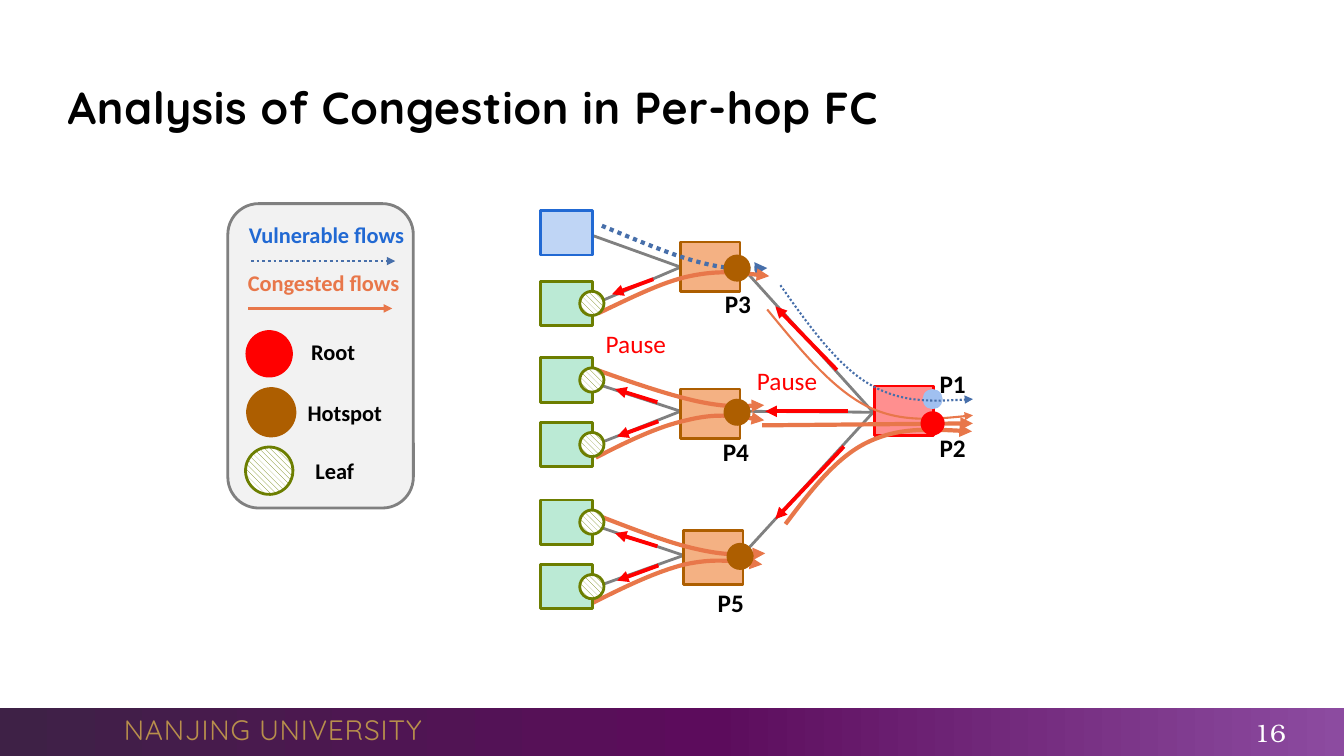
from copy import deepcopy
from dataclasses import dataclass

from lxml import etree
from pptx import Presentation
from pptx.dml.color import RGBColor
from pptx.enum.dml import MSO_LINE, MSO_PATTERN
from pptx.enum.shapes import MSO_CONNECTOR, MSO_SHAPE
from pptx.enum.text import MSO_ANCHOR, MSO_AUTO_SIZE, PP_ALIGN
from pptx.oxml.ns import qn
from pptx.util import Inches, Pt

RECT, ROUND, OVAL = MSO_SHAPE.RECTANGLE, MSO_SHAPE.ROUNDED_RECTANGLE, MSO_SHAPE.OVAL
LEFT, CENTER, RIGHT = PP_ALIGN.LEFT, PP_ALIGN.CENTER, PP_ALIGN.RIGHT
STRAIGHT, DOTS, MIDDLE = MSO_CONNECTOR.STRAIGHT, MSO_LINE.ROUND_DOT, MSO_ANCHOR.MIDDLE
STRIPES, HATCH = MSO_PATTERN.DARK_VERTICAL, MSO_PATTERN.WIDE_DOWNWARD_DIAGONAL


@dataclass(frozen=True)
class Theme:
    black: str = "000000"
    white: str = "FFFFFF"
    gray: str = "808080"
    panel: str = "F2F2F2"
    red: str = "FF0000"
    pink: str = "FF8F8F"
    sky: str = "A0C0F0"
    blue: str = "2169D3"
    pale_blue: str = "BFD5F5"
    flow_blue: str = "476FAA"
    orange: str = "E8774A"
    pale_orange: str = "F4B183"
    brown: str = "AD5E00"
    olive: str = "6C7E00"
    mint: str = "BBEAD5"
    gold: str = "B88F4C"
    footer: tuple = ((0, "3E2146"), (0.53, "5C0C5C"), (1, "8C4BA0"))
    body: str = "Calibri"
    heading: str = "Quicksand"
    number: str = "TeX Gyre Bonum"
    title_size: int = 32
    footer_size: int = 20
    label_size: int = 18
    legend_size: int = 16
    outline: float = 2
    pause_line: float = 2.75
    thick: float = 3
    thin: float = 1.5


T = Theme()
WIDTH, HEIGHT = 13.33, 7.5
TITLE = "Analysis of Congestion in Per-hop FC"
HOST_LEFT, HOST_WIDTH, HOST_HEIGHT = 5.36, 0.52, 0.44
HOST_TOPS = (2.09, 2.79, 3.55, 4.19, 4.96, 5.6)
SWITCH_WIDTH, PORT_SIZE, LEGEND_SIZE = 0.59, 0.24, 0.47
SWITCHES = [(6.75, 2.4, 0.49, 2.65), (6.75, 3.86, 0.49, 4.08), (6.78, 5.26, 0.54, 5.51)]
ROOT_LEFT, ROOT_TOP, ROOT_PORT = 8.67, 3.83, 4.09

FLOWS = [
    (T.flow_blue, T.thin, DOTS, [(7.74, 2.83), (8.02, 3.23), (8.31, 3.63), (8.62, 3.81),
                                 (8.94, 4), (9.29, 3.98), (9.65, 3.96)]),
    (T.orange, T.thin, None, [(7.61, 3.07), (7.93, 3.46), (8.24, 3.84), (8.58, 4.02),
                              (8.91, 4.19), (9.28, 4.16), (9.65, 4.12)]),
    (T.orange, T.thick, None, [(7.79, 5.2), (8.04, 4.87), (8.29, 4.54), (8.6, 4.39),
                               (8.91, 4.24), (9.27, 4.26), (9.64, 4.28)]),
    (T.flow_blue, T.thick, DOTS, [(5.97, 2.24), (6.31, 2.38), (6.66, 2.53), (6.93, 2.6),
                                  (7.2, 2.67), (7.4, 2.67), (7.61, 2.66)]),
    (T.orange, T.thick, None, [(5.93, 3.11), (6.25, 2.96), (6.56, 2.8), (6.84, 2.74),
                               (7.13, 2.68), (7.38, 2.71), (7.63, 2.74)]),
    (T.orange, T.thick, None, [(5.92, 3.67), (6.28, 3.8), (6.64, 3.92), (6.91, 3.98),
                               (7.19, 4.04), (7.39, 4.03), (7.58, 4.02)]),
    (T.orange, T.thick, None, [(5.91, 4.54), (6.22, 4.38), (6.53, 4.23), (6.81, 4.17),
                               (7.09, 4.1), (7.34, 4.13), (7.58, 4.17)]),
    (T.orange, T.thick, None, [(5.92, 5.11), (6.28, 5.25), (6.64, 5.39), (6.92, 5.45),
                               (7.19, 5.51), (7.39, 5.5), (7.59, 5.49)]),
    (T.orange, T.thick, None, [(5.88, 5.98), (6.2, 5.82), (6.51, 5.67), (6.79, 5.6),
                               (7.07, 5.54), (7.31, 5.57), (7.56, 5.6)]),
]
PAUSES = [((8.3, 3.67), (7.69, 3.04)), ((8.41, 4.08), (7.59, 4.08)), ((8.37, 4.43), (7.69, 5.15)),
          ((6.48, 2.77), (6.07, 2.92)),
          ((6.52, 3.99), (6.1, 3.86)), ((6.53, 4.18), (6.12, 4.33)),
          ((6.52, 5.42), (6.1, 5.29)), ((6.53, 5.61), (6.12, 5.76))]
PORT_LABELS = [("P3", 7.09, 2.81), ("P4", 7.07, 4.28), ("P1", 9.22, 3.61),
               ("P2", 9.22, 4.24), ("P5", 7.02, 5.78)]
PAUSE_LABELS = [(7.41, 3.58), (5.91, 3.21)]
LEGEND_MARKS = [("Root", 2.59, 3.31, 1.43, (2.67, 3.51), T.red, None),
                ("Hotspot", 2.59, 3.91, 1.66, (2.69, 4.09), T.brown, STRIPES),
                ("Leaf", 2.49, 4.49, 1.66, (2.67, 4.67), T.olive, HATCH)]
LEGEND_FLOWS = [("Vulnerable flows", 2.37, 2.14, T.blue, (2.49, 2.59), T.flow_blue, DOTS),
                ("Congested flows", 2.36, 2.62, T.orange, (2.46, 3.06), T.orange, None)]


def rgb(code):
    return RGBColor.from_string(code)


def add_block(page, kind, area, fill, edge=None):
    block = page.shapes.add_shape(kind, *map(Inches, area))
    block.shadow.inherit = False
    block.fill.solid()
    block.fill.fore_color.rgb = rgb(fill)
    if edge:
        block.line.color.rgb = rgb(edge)
        block.line.width = Pt(T.outline)
    else:
        block.line.fill.background()
    return block


def add_dot(page, center, size, color, pattern=None):
    area = (center[0] - size / 2, center[1] - size / 2, size, size)
    dot = add_block(page, OVAL, area, color, color if pattern else None)
    if pattern:
        dot.fill.patterned()
        dot.fill.pattern = pattern
        dot.fill.fore_color.rgb = rgb(color)
        dot.fill.back_color.rgb = rgb(T.white)
        dot.rotation = 87.2


def style_line(line, color, width, dash=None, arrow=True):
    line.color.rgb = rgb(color)
    line.width = Pt(width)
    if dash:
        line.dash_style = dash
    if arrow:
        etree.SubElement(line._get_or_add_ln(), qn("a:tailEnd"), type="triangle")


def add_line(page, start, end, color, width, dash=None, arrow=True):
    link = page.shapes.add_connector(STRAIGHT, *map(Inches, start + end))
    style_line(link.line, color, width, dash, arrow)
    etree.SubElement(link._element.spPr, qn("a:effectLst"))


def add_curve(page, color, width, dash, points):
    spots = [(Inches(x), Inches(y)) for x, y in points]
    builder = page.shapes.build_freeform(*spots[0])
    builder.add_line_segments(spots[1:], close=False)
    curve = builder.convert_to_shape()
    segments = list(curve._element.iter(qn("a:lnTo")))
    outline = segments[0].getparent()
    for first in range(0, len(segments), 3):
        bezier = etree.SubElement(outline, qn("a:cubicBezTo"))
        for segment in segments[first:first + 3]:
            bezier.append(segment[0])
            outline.remove(segment)
    curve.shadow.inherit = False
    curve.fill.background()
    style_line(curve.line, color, width, dash)


def style_text(frame, words, size, color, font, bold=False, align=LEFT, spacing=None):
    frame.text = words
    para = frame.paragraphs[0]
    para.alignment = align
    span = para.runs[0]
    span.font.size, span.font.name, span.font.bold = Pt(size), font, bold
    span.font.color.rgb = rgb(color)
    if spacing:
        span._r.get_or_add_rPr().set("spc", str(spacing))


def add_text(page, area, words, size, color, font=T.body, wrap=True, anchor=None, **look):
    frame = page.shapes.add_textbox(*map(Inches, area)).text_frame
    frame.word_wrap = wrap
    frame.auto_size = MSO_AUTO_SIZE.NONE if anchor else MSO_AUTO_SIZE.SHAPE_TO_FIT_TEXT
    if anchor:
        frame.vertical_anchor = anchor
    style_text(frame, words, size, color, font, **look)


def add_frame(page):
    bar = add_block(page, RECT, (0, 7.02, WIDTH, HEIGHT - 7.02), T.white)
    bar.fill.gradient()
    bar.fill.gradient_angle = 0
    stops = next(bar._element.iter(qn("a:gsLst")))
    stops.append(deepcopy(stops[0]))
    for stop, (position, color) in zip(bar.fill.gradient_stops, T.footer):
        stop.position = position
        stop.color.rgb = rgb(color)
    add_text(page, (1.13, 7.02, 3.17, 0.44), "NANJING UNIVERSITY", T.footer_size, T.gold,
             T.heading, wrap=False, anchor=MIDDLE, spacing=50)
    add_text(page, (11.79, 7.09, 1.06, 0.35), "16", T.label_size, T.white,
             T.number, anchor=MIDDLE, align=RIGHT)
    title = page.shapes.title
    title.left, title.top, title.width, title.height = map(Inches, (0.57, 0.67, 12, 0.77))
    title.text_frame.vertical_anchor = MIDDLE
    style_text(title.text_frame, TITLE, T.title_size, T.black, T.heading, bold=True, spacing=50)


def add_legend(page):
    add_block(page, ROUND, (2.26, 2.02, 1.84, 3.02), T.panel, T.gray)
    for words, left, top, width, center, color, pattern in LEGEND_MARKS:
        add_dot(page, center, LEGEND_SIZE, color, pattern)
        add_text(page, (left, top, width, 0.37), words, T.legend_size, T.black,
                 bold=True, align=CENTER)
    for words, left, top, ink, start, color, dash in LEGEND_FLOWS:
        add_text(page, (left, top, 1.76, 0.37), words, T.legend_size, ink, bold=True)
        add_line(page, start, (start[0] + 1.43, start[1]), color, T.outline, dash)


def add_network(page):
    host_edge = HOST_LEFT + HOST_WIDTH
    host_middles = [top + HOST_HEIGHT / 2 for top in HOST_TOPS]
    for index, (left, top, height, port) in enumerate(SWITCHES):
        add_line(page, (7.36, port), (8.66, ROOT_PORT), T.gray, T.outline, arrow=False)
        for middle in host_middles[2 * index:2 * index + 2]:
            add_line(page, (left, port), (host_edge - 0.02, middle + 0.02),
                     T.gray, T.outline, arrow=False)
    add_block(page, RECT, (ROOT_LEFT, ROOT_TOP, SWITCH_WIDTH, 0.49), T.pink, T.red)
    add_dot(page, (9.25, 3.96), 0.2, T.sky)
    for left, top, height, port in SWITCHES:
        add_block(page, RECT, (left, top, SWITCH_WIDTH, height), T.pale_orange, T.brown)
    for flow in FLOWS:
        add_curve(page, *flow)
    add_line(page, (7.56, 4.22), (9.65, 4.2), T.orange, T.thick)
    add_dot(page, (9.25, 4.2), PORT_SIZE, T.red)
    for index, top in enumerate(HOST_TOPS):
        fill, edge = (T.mint, T.olive) if index else (T.pale_blue, T.blue)
        add_block(page, RECT, (HOST_LEFT, top, HOST_WIDTH, HOST_HEIGHT), fill, edge)
    for left, top, height, port in SWITCHES:
        add_dot(page, (left + 0.56, port + 0.01), PORT_SIZE, T.brown, STRIPES)
    for middle in host_middles[1:]:
        add_dot(page, (host_edge - 0.01, middle), PORT_SIZE, T.olive, HATCH)
    for start, end in PAUSES:
        add_line(page, start, end, T.red, T.pause_line)
    for words, left, top in PORT_LABELS:
        add_text(page, (left, top, 0.89, 0.4), words, T.label_size, T.black, bold=True)
    for left, top in PAUSE_LABELS:
        add_text(page, (left, top, 0.8, 0.4), "Pause", T.label_size, T.red, wrap=False)


def main():
    deck = Presentation()
    deck.slide_width, deck.slide_height = Inches(WIDTH), Inches(HEIGHT)
    page = deck.slides.add_slide(deck.slide_layouts[5])
    add_frame(page)
    add_network(page)
    add_legend(page)
    deck.save("out.pptx")


if __name__ == "__main__":
    main()
